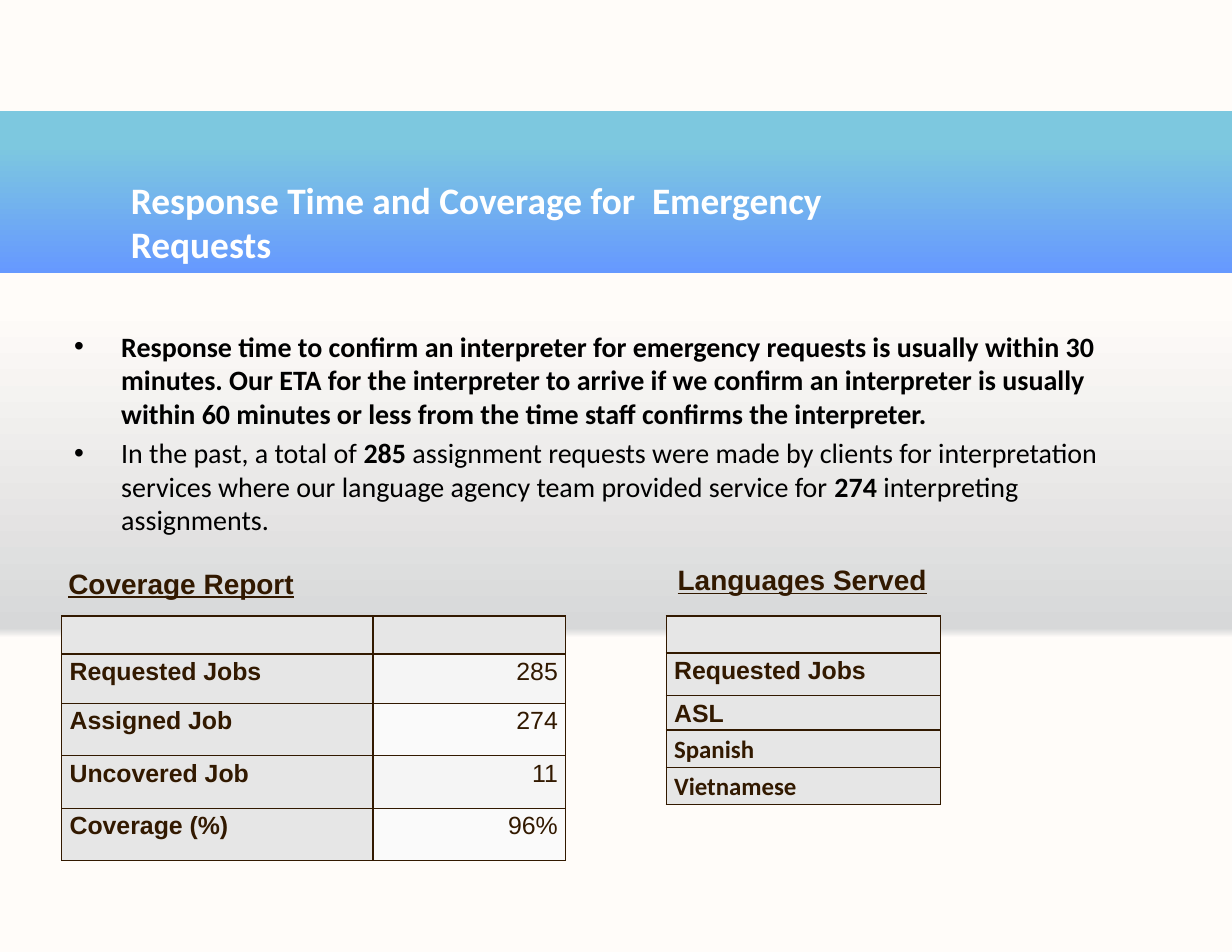
from lxml.etree import SubElement
from pptx import Presentation
from pptx.dml.color import RGBColor
from pptx.enum.shapes import MSO_SHAPE
from pptx.enum.text import MSO_ANCHOR, MSO_AUTO_SIZE, PP_ALIGN
from pptx.oxml.ns import qn
from pptx.util import Cm, Pt

BROWN = "321900"
CREAM = "FFFCF9"
LABEL_FILL = "E6E6E6"
VALUE_FILLS = ("F5F5F5", "FAFAFA")

FRAME = dict(word_wrap=True, auto_size=MSO_AUTO_SIZE.NONE,
             vertical_anchor=MSO_ANCHOR.TOP, margin_left=Cm(0.28),
             margin_right=Cm(0.28), margin_top=Cm(0.15), margin_bottom=Cm(0.15))
HEADING_FRAME = dict(word_wrap=True, margin_left=Cm(0.25), margin_right=Cm(0.25))
CELL = dict(margin_left=Cm(0.18), margin_right=Cm(0.18), margin_top=0,
            margin_bottom=0, vertical_anchor=MSO_ANCHOR.TOP)
TITLE_FONT = dict(name="Calibri", size=Pt(24), bold=True)
BODY_FONT = dict(name="Calibri", size=Pt(18))
HEADING_FONT = dict(name="Arial", size=Pt(18), bold=True, underline=True)
CELL_FONT = dict(name="Arial", size=Pt(16))

TITLE = "Response Time and Coverage for  Emergency  Requests"
BULLETS = [
    [("Response time to confirm an interpreter for emergency requests is usually "
      "within 30 minutes. Our ETA for the interpreter to arrive if we confirm an "
      "interpreter is usually within 60 minutes or less from the time staff confirms "
      "the interpreter.", True)],
    [("In the past, a total of ", False), ("285", True),
     (" assignment requests were made by clients for interpretation services where "
      "our language agency team provided service for ", False),
     ("274", True), (" interpreting assignments.", False)],
]
COVERAGE = [("", ""), ("Requested Jobs", "285"), ("Assigned Job", "274"),
            ("Uncovered Job", "11"), ("Coverage (%)", "96%")]
LANGUAGES = [("",), ("Requested Jobs",), ("ASL",), ("Spanish",), ("Vietnamese",)]
CALIBRI_LABELS = ("Spanish", "Vietnamese")


def rgb(hex_code):
    return RGBColor.from_string(hex_code)


def apply(target, values):
    for attribute, value in values.items():
        setattr(target, attribute, value)


def write(paragraph, text, color, **font_values):
    run = paragraph.add_run()
    run.text = text
    apply(run.font, font_values)
    run.font.color.rgb = rgb(color)


def set_gradient(fill, owner, stops, clockwise):
    fill.gradient()
    fill.gradient_angle = 360 - clockwise
    stop_list = next(owner.iter(qn("a:gsLst")))
    for stop in list(stop_list):
        stop_list.remove(stop)
    for percent, color in stops:
        stop = SubElement(stop_list, qn("a:gs"), pos=str(percent * 1000))
        SubElement(stop, qn("a:srgbClr"), val=color)


def add_title_band(slide, left, top, width, height):
    band = slide.shapes.add_shape(MSO_SHAPE.RECTANGLE, left, top, width, height)
    band.shadow.inherit = False
    band.line.fill.background()
    set_gradient(band.fill, band.element, [(21, "7DC8DF"), (100, "6699FF")], 90)
    slide.shapes.element.insert(2, band.element)

    title = slide.shapes.title
    apply(title, dict(left=left + Cm(2.69), top=top + Cm(1.35),
                      width=Cm(17.3), height=Cm(1.78)))
    apply(title.text_frame, FRAME)
    paragraph = title.text_frame.paragraphs[0]
    paragraph.alignment = PP_ALIGN.LEFT
    write(paragraph, TITLE, "FFFFFF", **TITLE_FONT)


def add_bullets(slide, left, top, width, height):
    frame = slide.shapes.add_textbox(left, top, width, height).text_frame
    apply(frame, FRAME)
    for index, pieces in enumerate(BULLETS):
        paragraph = frame.add_paragraph() if index else frame.paragraphs[0]
        properties = paragraph._p.get_or_add_pPr()
        properties.set("marL", str(Cm(1.07)))
        properties.set("indent", str(-Cm(1.07)))
        SubElement(properties, qn("a:buFont"), typeface="Arial")
        SubElement(properties, qn("a:buChar"), char="•")
        if index:
            paragraph.space_before = Pt(3.6)
        for text, bold in pieces:
            write(paragraph, text, "000000", bold=bold, **BODY_FONT)


def add_heading(slide, text, left, top, width, height):
    frame = slide.shapes.add_textbox(left, top, width, height).text_frame
    apply(frame, HEADING_FRAME)
    paragraph = frame.paragraphs[0]
    paragraph._p.get_or_add_pPr().set("marL", str(Cm(0.64)))
    apply(paragraph, dict(line_spacing=1.15, space_after=Pt(10)))
    write(paragraph, text, BROWN, **HEADING_FONT)


def add_borders(cell):
    properties = cell._tc.get_or_add_tcPr()
    for position, side in enumerate(("lnL", "lnR", "lnT", "lnB")):
        line = properties.makeelement(qn(f"a:{side}"), {"w": str(Pt(1))})
        solid = SubElement(line, qn("a:solidFill"))
        SubElement(solid, qn("a:srgbClr"), val=BROWN)
        properties.insert(position, line)


def fill_cell(cell, text, row, column):
    is_value = row > 0 and column > 0
    apply(cell, CELL)
    cell.fill.solid()
    color = VALUE_FILLS[(row - 1) % 2] if is_value else LABEL_FILL
    cell.fill.fore_color.rgb = rgb(color)
    add_borders(cell)
    if text:
        paragraph = cell.text_frame.paragraphs[0]
        paragraph.line_spacing = 1.15
        paragraph.alignment = PP_ALIGN.RIGHT if is_value else PP_ALIGN.LEFT
        font_values = dict(CELL_FONT, bold=not is_value)
        if text in CALIBRI_LABELS:
            font_values["name"] = "Calibri"
        write(paragraph, text, BROWN, **font_values)


def add_report(slide, records, left, top, widths, heights):
    table = slide.shapes.add_table(len(records), len(widths), left, top,
                                   sum(widths), sum(heights)).table
    apply(table, dict(first_row=False, horz_banding=False))
    for column, width in zip(table.columns, widths):
        column.width = width
    for row, height in zip(table.rows, heights):
        row.height = height
    for row, record in enumerate(records):
        for column, text in enumerate(record):
            fill_cell(table.cell(row, column), text, row, column)


def main():
    presentation = Presentation()
    apply(presentation, dict(slide_width=Cm(27.94), slide_height=Cm(21.59)))
    slide = presentation.slides.add_slide(presentation.slide_layouts[5])
    set_gradient(slide.background.fill, slide.element,
                 [(33, CREAM), (34, "D7D8D9"), (68, CREAM)], 270)

    add_title_band(slide, 0, Cm(2.51), presentation.slide_width, Cm(3.68))
    add_bullets(slide, Cm(1.4), Cm(7.32), Cm(25.1), Cm(5.2))

    reports_top = Cm(13.97)
    add_heading(slide, "Coverage Report", Cm(0.66), Cm(12.6), Cm(6.6), Cm(1.07))
    add_report(slide, COVERAGE, Cm(1.4), reports_top, [Cm(7.06), Cm(4.37)],
               [Cm(0.86), Cm(1.12)] + [Cm(1.19)] * 3)
    add_heading(slide, "Languages Served", Cm(14.48), Cm(12.52), Cm(7.09), Cm(1.07))
    add_report(slide, LANGUAGES, Cm(15.11), reports_top, [Cm(6.22)],
               [Cm(0.84), Cm(0.97), Cm(0.76), Cm(0.84), Cm(0.84)])
    presentation.save("out.pptx")


if __name__ == "__main__":
    main()
